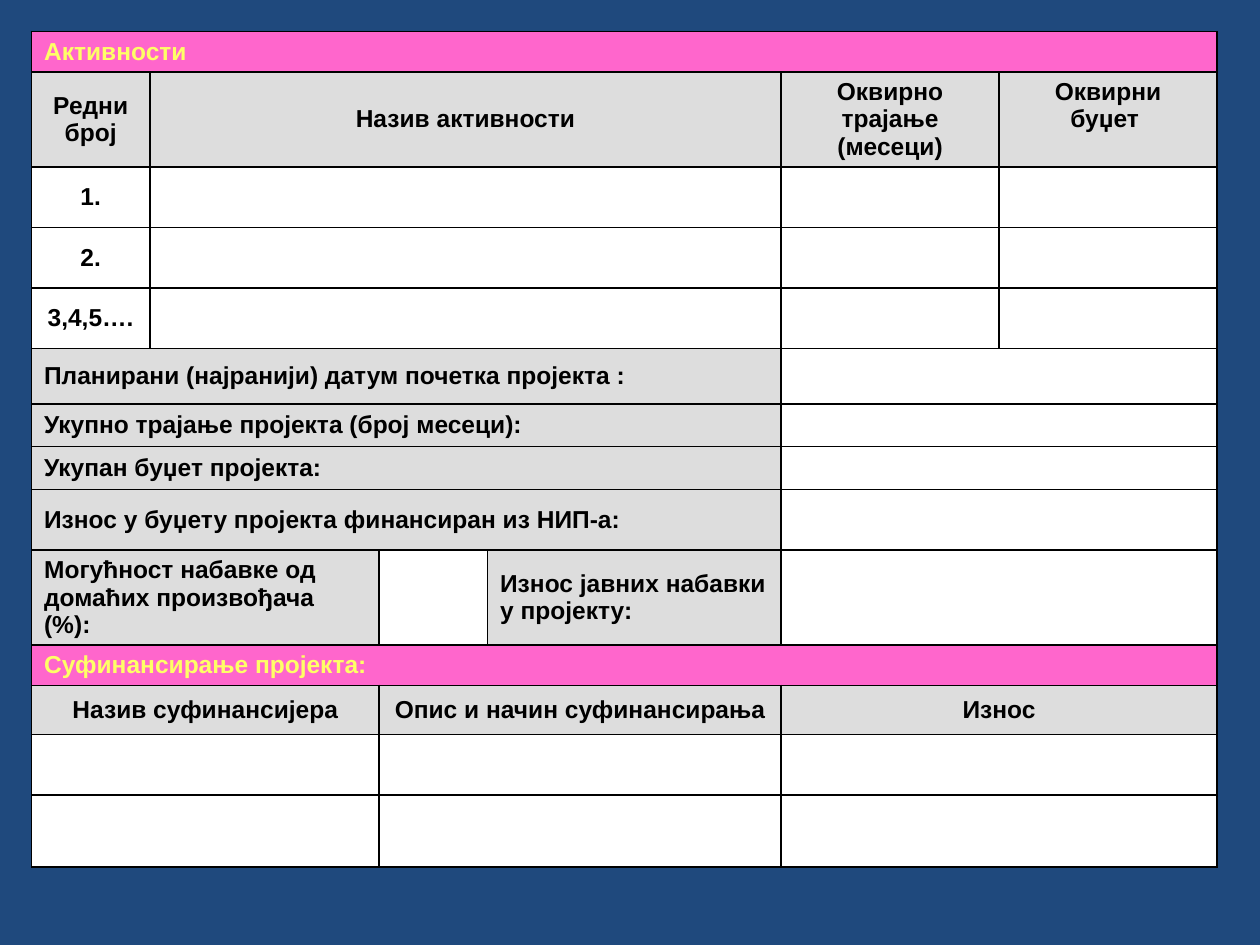
"""Build the project activities and co-financing form as a one-table slide."""
from lxml import etree
from pptx import Presentation
from pptx.dml.color import RGBColor
from pptx.enum.text import MSO_ANCHOR, PP_ALIGN
from pptx.oxml.ns import qn
from pptx.util import Inches, Pt

TOP, MIDDLE = MSO_ANCHOR.TOP, MSO_ANCHOR.MIDDLE
LEFT, CENTER = PP_ALIGN.LEFT, PP_ALIGN.CENTER
COLORS = {"back": "1F497D", "bar": "FF66CC", "bar_text": "FFFF66",
          "label": "DDDDDD", "blank": "FFFFFF", "ink": "000000"}
COLS = [0.94, 1.82, 0.86, 2.33, 1.73, 1.73]
ROWS = [0.32, 0.75, 0.48, 0.48, 0.48, 0.44, 0.34, 0.34, 0.48, 0.56, 0.32, 0.39, 0.48, 0.57]
NUMBERED, PAIR, THIRDS = (1, 3, 1, 1), (4, 2), (2, 2, 2)


class Form:
    def __init__(self, prs):
        self.font, self.size = "Arial", Pt(14)
        self.s = prs.slides.add_slide(prs.slide_layouts[6])
        fill = self.s.background.fill
        fill.solid()
        fill.fore_color.rgb = self.color("back")

    def color(self, name):
        return RGBColor.from_string(COLORS[name])

    def table(self, left, top, cols, rows):
        frame = self.s.shapes.add_table(len(rows), len(cols), Inches(left), Inches(top),
                                        Inches(sum(cols)), Inches(sum(rows)))
        self.tbl = frame.table
        self.tbl.first_row = self.tbl.horz_banding = False
        for lines, sizes in ((self.tbl.columns, cols), (self.tbl.rows, rows)):
            for line, size in zip(lines, sizes):
                if lines is self.tbl.columns:
                    line.width = Inches(size)
                else:
                    line.height = Inches(size)

    def borders(self, cell, side_width):
        tcPr = cell._tc.get_or_add_tcPr()
        for edge, width in (("L", side_width), ("R", side_width), ("T", 1), ("B", 1)):
            ln = etree.SubElement(tcPr, qn(f"a:ln{edge}"), w=str(Pt(width)))
            fill = etree.SubElement(ln, qn("a:solidFill"))
            etree.SubElement(fill, qn("a:srgbClr"), val=COLORS["ink"])

    def cell(self, row, col, span, text="", fill="blank", align=LEFT, anchor=MIDDLE):
        for i in range(col, col + span):
            c = self.tbl.cell(row, i)
            self.borders(c, 0.75 if fill == "bar" else 1)
            c.fill.solid()
            c.fill.fore_color.rgb = self.color(fill)
            c.margin_top = c.margin_bottom = Inches(0.05 if text and i == col else 0)
        c = self.tbl.cell(row, col)
        if span > 1:
            c.merge(self.tbl.cell(row, col + span - 1))
        if not text:
            return
        c.vertical_anchor = anchor
        c.text_frame.text = text
        for p in c.text_frame.paragraphs:
            p.alignment = align
            for r in p.runs:
                r.font.name, r.font.size, r.font.bold = self.font, self.size, True
                r.font.color.rgb = self.color("bar_text" if fill == "bar" else "ink")

    def row(self, row, spans, texts=(), fill="label", align=LEFT, anchors=()):
        col = 0
        for i, span in enumerate(spans):
            text = texts[i] if i < len(texts) else ""
            self.cell(row, col, span, text, fill if text else "blank", align,
                      anchors[i] if anchors else MIDDLE)
            col += span


def main():
    prs = Presentation()
    prs.slide_width, prs.slide_height = Inches(10), Inches(7.5)
    form = Form(prs)
    form.table(0.25, 0.25, COLS, ROWS)
    form.row(0, (6,), ["Активности"], "bar")
    form.row(1, NUMBERED, ["Редни\nброј", "Назив активности", "Оквирно\nтрајање (месеци)",
                           "Оквирни\nбуџет "],
             align=CENTER, anchors=(MIDDLE, MIDDLE, MIDDLE, TOP))
    for i, number in enumerate(("1.", "2.", "3,4,5…."), start=2):
        form.row(i, NUMBERED, [number], "blank", CENTER)
    totals = ["Планирани (најранији) датум почетка пројекта :",
              "Укупно трајање пројекта (број месеци):",
              "Укупан буџет пројекта:",
              "Износ у буџету пројекта финансиран из НИП-а:"]
    for i, label in enumerate(totals, start=5):
        form.row(i, PAIR, [label])
    form.row(9, (2, 1, 1, 2), ["Могућност набавке од домаћих произвођача (%):", "",
                               "Износ jавних набавки у пројекту:"])
    form.row(10, (6,), ["Суфинансирање пројекта:"], "bar")
    form.row(11, THIRDS, ["Назив суфинансијера", "Опис и начин суфинансирања", "Износ"],
             align=CENTER)
    for i in (12, 13):
        form.row(i, THIRDS)
    prs.save("out.pptx")


if __name__ == "__main__":
    main()
